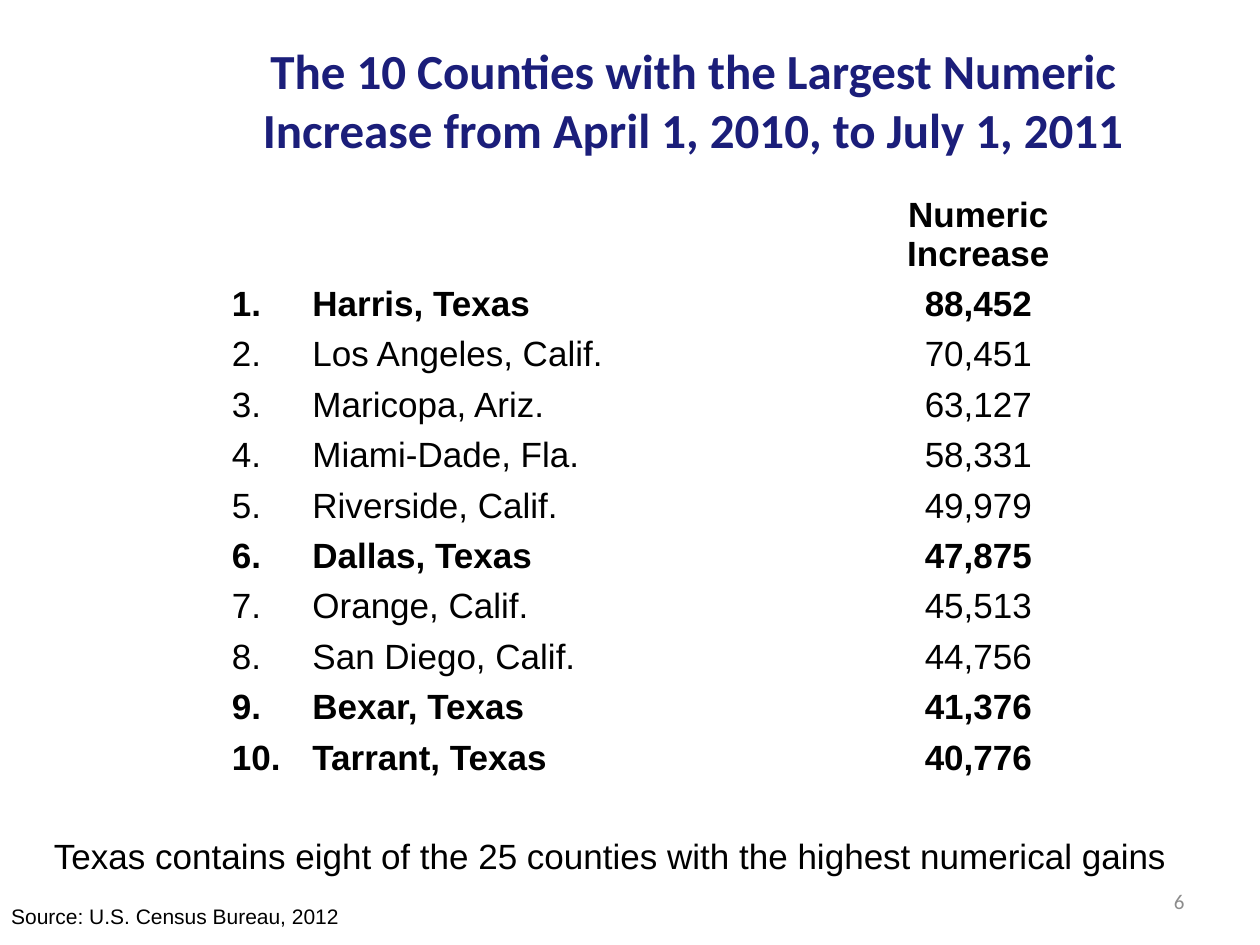
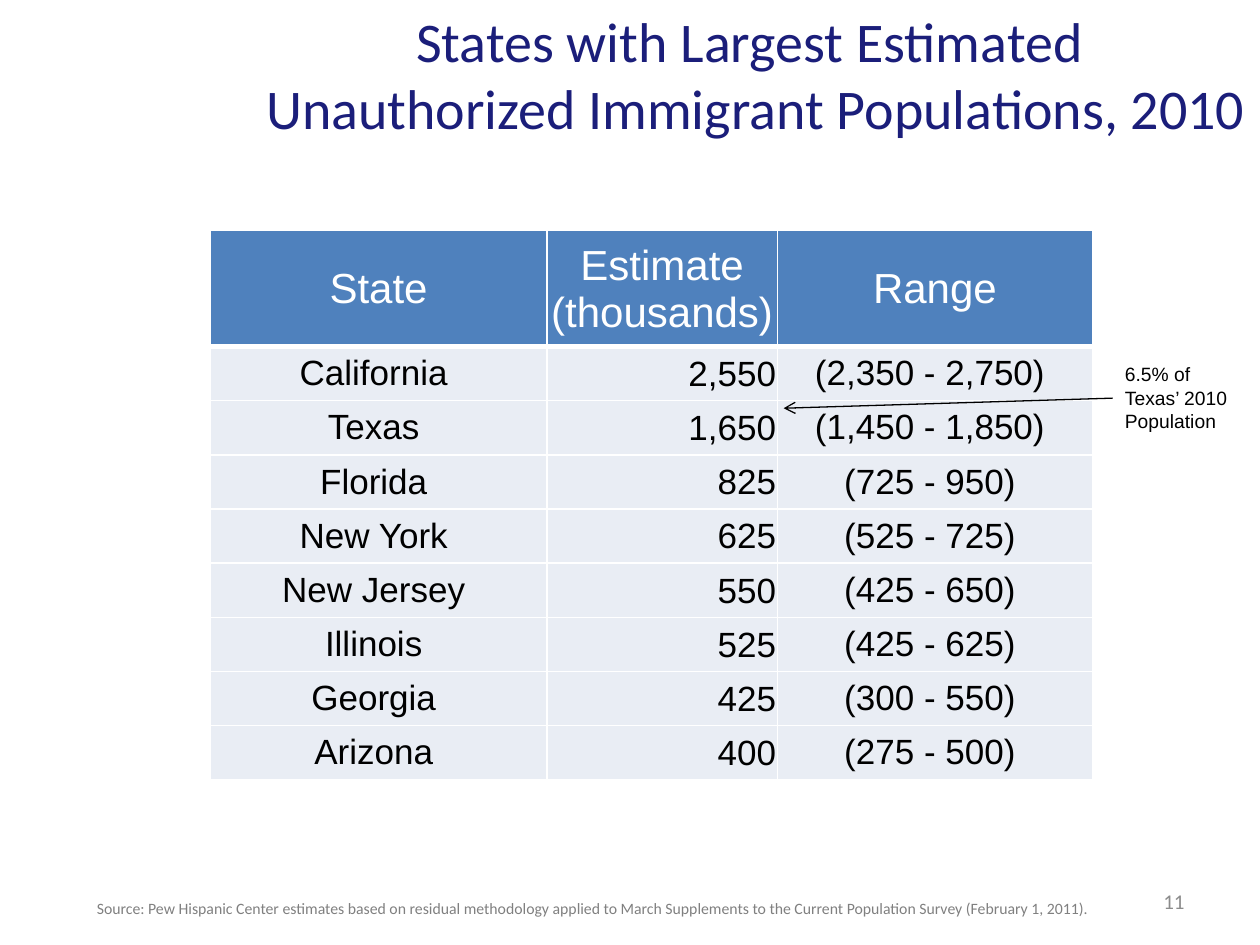
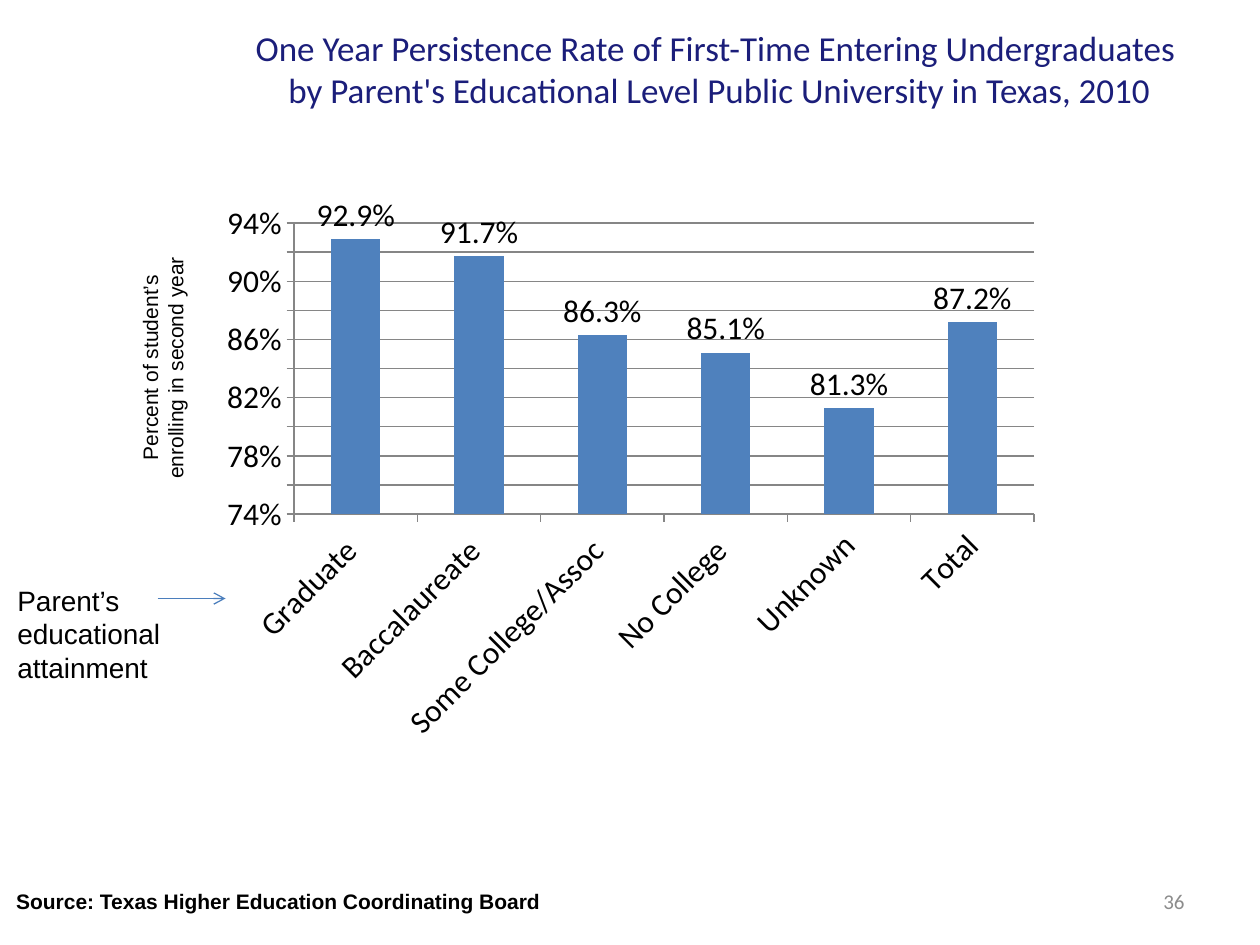
from dataclasses import dataclass, replace
from typing import Optional

from lxml import etree
from pptx import Presentation
from pptx import util as u
from pptx.chart.data import CategoryChartData
from pptx.dml.color import RGBColor
from pptx.enum import chart as charts, shapes, text
from pptx.oxml.ns import qn

Inches = u.Inches
ALIGN = text.PP_ALIGN
ANCHOR = text.MSO_ANCHOR

COLORS = {
    "title": "1B1E7A",
    "text": "000000",
    "white": "FFFFFF",
    "page": "8C8C8C",
    "source": "808080",
    "accent": "4F81BD",
    "arrow": "4B7EBC",
    "row": "E9EDF4",
    "axis": "868686",
}


@dataclass(frozen=True)
class Style:
    size: float
    font: str = "Arial"
    color: str = "text"
    bold: bool = False


@dataclass(frozen=True)
class Box:
    left: float
    top: float
    width: float
    height: float

    def lengths(self) -> tuple:
        return tuple(Inches(v) for v in (self.left, self.top, self.width, self.height))


@dataclass(frozen=True)
class Note:
    """A free-standing piece of text."""
    words: str
    box: Box
    style: Style
    align: Optional[ALIGN] = None
    anchor: ANCHOR = ANCHOR.TOP
    wrap: bool = True
    rotation: float = 0


@dataclass(frozen=True)
class CellLook:
    style: Style
    align: ALIGN
    anchor: ANCHOR = ANCHOR.MIDDLE
    margins: tuple = (0, 0, 0, 0)  # left, top, right, bottom
    fill: Optional[str] = None


PAGE_BOX = Box(7.17, 6.95, 2.33, 0.4)
PAGE_STYLE = Style(12, "Calibri", "page")


# Shared helpers
def rgb(name: str) -> RGBColor:
    return RGBColor.from_string(COLORS[name])


def set_font(font, style: Style) -> None:
    font.size = u.Pt(style.size)
    font.name = style.font
    font.bold = style.bold
    font.color.rgb = rgb(style.color)


def write(frame, words: str, style: Style, align: Optional[ALIGN] = None) -> None:
    paragraph = frame.paragraphs[0]
    paragraph.alignment = align
    for index, line in enumerate(words.split("\n")):
        if index:
            paragraph.add_line_break()
        run = paragraph.add_run()
        run.text = line
        set_font(run.font, style)


def add_note(slide, note: Note):
    box = slide.shapes.add_textbox(*note.box.lengths())
    box.rotation = note.rotation
    frame = box.text_frame
    frame.word_wrap = note.wrap
    frame.auto_size = text.MSO_AUTO_SIZE.SHAPE_TO_FIT_TEXT
    frame.vertical_anchor = note.anchor
    write(frame, note.words, note.style, note.align)
    return box


def add_titled_slide(deck, title: str, box: Box, size: float, page: int, bold: bool = False):
    slide = deck.slides.add_slide(deck.slide_layouts[5])
    heading = slide.shapes.title
    heading.left, heading.top, heading.width, heading.height = box.lengths()
    frame = heading.text_frame
    frame.auto_size = text.MSO_AUTO_SIZE.NONE
    frame.vertical_anchor = ANCHOR.MIDDLE
    write(frame, title, Style(size, "Calibri", "title", bold), ALIGN.CENTER)
    number = add_note(slide, Note(str(page), PAGE_BOX, PAGE_STYLE, ALIGN.RIGHT, ANCHOR.MIDDLE))
    number.text_frame.auto_size = text.MSO_AUTO_SIZE.NONE
    return slide


def add_arrow(slide, start: tuple, end: tuple, color: str):
    arrow = slide.shapes.add_connector(
        shapes.MSO_CONNECTOR.STRAIGHT, *(Inches(v) for v in start + end))
    arrow.line.color.rgb = rgb(color)
    arrow.line.width = u.Pt(0.75)
    etree.SubElement(arrow.line._get_or_add_ln(), qn("a:tailEnd"), type="arrow")
    etree.SubElement(arrow._element.spPr, qn("a:effectLst"))
    return arrow


def add_grid(slide, box: Box, widths: list, heights: list):
    table = slide.shapes.add_table(len(heights), len(widths), *box.lengths()).table
    table.first_row = table.horz_banding = False
    for column, width in zip(table.columns, widths):
        column.width = Inches(width)
    for row, height in zip(table.rows, heights):
        row.height = Inches(height)
    return table


def fill_cell(cell, words: str, look: CellLook) -> None:
    cell.margin_left, cell.margin_top, cell.margin_right, cell.margin_bottom = (
        Inches(v) for v in look.margins)
    cell.vertical_anchor = look.anchor
    if look.fill:
        cell.fill.solid()
        cell.fill.fore_color.rgb = rgb(look.fill)
    else:
        cell.fill.background()
    if words:
        write(cell.text_frame, words, look.style, look.align)


def set_borders(cell, bottom: float = 1, top: float = 1) -> None:
    """Draw white cell borders; they must precede the fill element."""
    properties = cell._tc.get_or_add_tcPr()
    for index, (side, points) in enumerate((("L", 1), ("R", 1), ("T", top), ("B", bottom))):
        line = etree.Element(qn(f"a:ln{side}"), w=str(u.Pt(points)))
        paint = etree.SubElement(line, qn("a:solidFill"))
        etree.SubElement(paint, qn("a:srgbClr"), val=COLORS["white"])
        properties.insert(index, line)


# Slide 1: counties
COUNTIES = [
    ("Harris, Texas", "88,452"),
    ("Los Angeles, Calif.", "70,451"),
    ("Maricopa, Ariz.", "63,127"),
    ("Miami-Dade, Fla.", "58,331"),
    ("Riverside, Calif.", "49,979"),
    ("Dallas, Texas", "47,875"),
    ("Orange, Calif.", "45,513"),
    ("San Diego, Calif.", "44,756"),
    ("Bexar, Texas", "41,376"),
    ("Tarrant, Texas", "40,776"),
]


def build_counties(deck) -> None:
    slide = add_titled_slide(
        deck, "The 10 Counties with the Largest Numeric Increase from April 1, 2010, to July 1, 2011",
        Box(1.75, 0.25, 7.5, 1.08), 28, 6, bold=True)
    table = add_grid(slide, Box(1.75, 1.5, 6.84, 4.58), [0.64, 4.55, 1.65],
                     [0.68] + [0.39] * len(COUNTIES))
    margins = (0.09, 0.05, 0.09, 0.04)
    header = CellLook(Style(20, bold=True), ALIGN.CENTER, ANCHOR.BOTTOM, margins)
    for column, words in enumerate(("", "", "Numeric\nIncrease")):
        fill_cell(table.cell(0, column), words, header)
    for rank, (county, increase) in enumerate(COUNTIES, 1):
        style = Style(20, bold=county.endswith("Texas"))
        name_look = CellLook(style, ALIGN.LEFT, margins=margins)
        value_look = replace(name_look, align=ALIGN.CENTER)
        fill_cell(table.cell(rank, 0), f"{rank}.", name_look)
        fill_cell(table.cell(rank, 1), county, name_look)
        fill_cell(table.cell(rank, 2), increase, value_look)
    add_note(slide, Note("Source: U.S. Census Bureau, 2012", Box(-0.01, 7.12, 2.82, 0.3),
                         Style(12), wrap=False))
    add_note(slide, Note("Texas contains eight of the 25 counties with the highest numerical gains",
                         Box(0.33, 6.57, 9.17, 0.44), Style(20), wrap=False))


# Slide 2: states
STATES = [
    ("California ", "2,550", "(2,350 - 2,750) "),
    ("Texas ", "1,650", "(1,450 - 1,850) "),
    ("Florida ", "825", "(725 - 950) "),
    ("New York ", "625", "(525 - 725) "),
    ("New Jersey ", "550", "(425 - 650) "),
    ("Illinois ", "525", "(425 - 625) "),
    ("Georgia ", "425", "(300 - 550) "),
    ("Arizona ", "400", "(275 - 500) "),
]


def build_states(deck) -> None:
    slide = add_titled_slide(
        deck, "States with Largest Estimated \nUnauthorized Immigrant Populations, 2010 ",
        Box(2, 0, 8, 1.17), 32, 11)
    table = add_grid(slide, Box(1.67, 1.83, 7, 4.33), [2.67, 1.83, 2.5],
                     [0.92] + [0.43] * len(STATES))
    header = CellLook(Style(24, color="white"), ALIGN.CENTER, fill="accent")
    body = CellLook(Style(20), ALIGN.CENTER, fill="row")
    estimate_margins = (0.01, 0.01, 0.01, 0)
    rows = [("State", "Estimate (thousands)", "Range")] + STATES
    for row, values in enumerate(rows):
        look = body if row else header
        estimate_look = replace(look, margins=estimate_margins,
                                align=ALIGN.RIGHT if row else ALIGN.CENTER)
        for column, words in enumerate(values):
            cell = table.cell(row, column)
            fill_cell(cell, words, estimate_look if column == 1 else look)
            set_borders(cell, bottom=1 if row else 3, top=3 if row == 1 else 1)
    add_note(slide, Note(
        "Source: Pew Hispanic Center estimates based on residual methodology applied to "
        "March Supplements to the Current Population Survey (February 1, 2011).",
        Box(0.67, 7.08, 8.49, 0.25), Style(9, "Calibri", "source")))
    callout = add_note(slide, Note("6.5% of Texas’ 2010 Population",
                                   Box(8.83, 2.83, 1.17, 0.66), Style(11)))
    pointer = add_arrow(slide, (8.83, 3.16), (6.22, 3.24), "text")
    pointer.begin_connect(callout, 1)


# Slide 3: persistence
PERSISTENCE = {
    "Graduate ": 0.929,
    "Baccalaureate ": 0.917,
    "Some College/Assoc ": 0.863,
    "No College ": 0.851,
    "Unknown": 0.813,
    "Total": 0.872,
}


def add_persistence_chart(slide) -> None:
    data = CategoryChartData()
    data.categories = list(PERSISTENCE)
    data.add_series("Series 1", list(PERSISTENCE.values()))
    chart = slide.shapes.add_chart(charts.XL_CHART_TYPE.COLUMN_CLUSTERED,
                                   *Box(1.67, 1.53, 6.67, 4.44).lengths(), data).chart
    chart.has_title = chart.has_legend = False
    style = Style(18, "Calibri")
    set_font(chart.font, style)

    plot = chart.plots[0]
    plot.gap_width = 150
    plot.vary_by_categories = False
    plot.has_data_labels = True
    labels = plot.data_labels
    labels.show_value = True
    labels.number_format = "0.0%"
    labels.number_format_is_linked = False
    labels.position = charts.XL_LABEL_POSITION.OUTSIDE_END
    set_font(labels.font, style)
    bars = plot.series[0].format.fill
    bars.solid()
    bars.fore_color.rgb = rgb("accent")

    rates, levels = chart.value_axis, chart.category_axis
    rates.minimum_scale, rates.maximum_scale, rates.major_unit = 0.74, 0.94, 0.02
    rates.has_major_gridlines = True
    rates.tick_labels.number_format = "0%"
    rates.tick_labels.number_format_is_linked = False
    for axis in (rates, levels):
        axis.major_tick_mark = charts.XL_TICK_MARK.OUTSIDE
        set_font(axis.tick_labels.font, style)
    for line in (rates.format.line, levels.format.line, rates.major_gridlines.format.line):
        line.color.rgb = rgb("axis")
        line.width = u.Pt(0.75)
    # Slant the category labels by 45 degrees
    levels._element.find(f"{qn('c:txPr')}/{qn('a:bodyPr')}").set("rot", "-2700000")


def build_persistence(deck) -> None:
    slide = add_titled_slide(
        deck, "One Year Persistence Rate of First-Time Entering Undergraduates \n"
        "by Parent's Educational Level Public University in Texas, 2010",
        Box(1.25, 0, 8.92, 1.08), 20, 36)
    add_persistence_chart(slide)
    add_note(slide, Note("Source: Texas Higher Education Coordinating Board",
                         Box(0.03, 7, 5, 0.3), Style(12, bold=True)))
    add_note(slide, Note("Parent’s educational attainment", Box(0.04, 4.58, 2, 0.91), Style(16)))
    add_arrow(slide, (1.25, 4.75), (1.79, 4.75), "arrow")
    add_note(slide, Note("Percent of student’s enrolling in second year",
                         Box(0.12, 2.67, 2.34, 0.5), Style(12), ALIGN.CENTER, rotation=270))


def main() -> None:
    deck = Presentation()
    deck.slide_width, deck.slide_height = Inches(10), Inches(7.5)
    build_counties(deck)
    build_states(deck)
    build_persistence(deck)
    deck.save("out.pptx")


if __name__ == "__main__":
    main()
